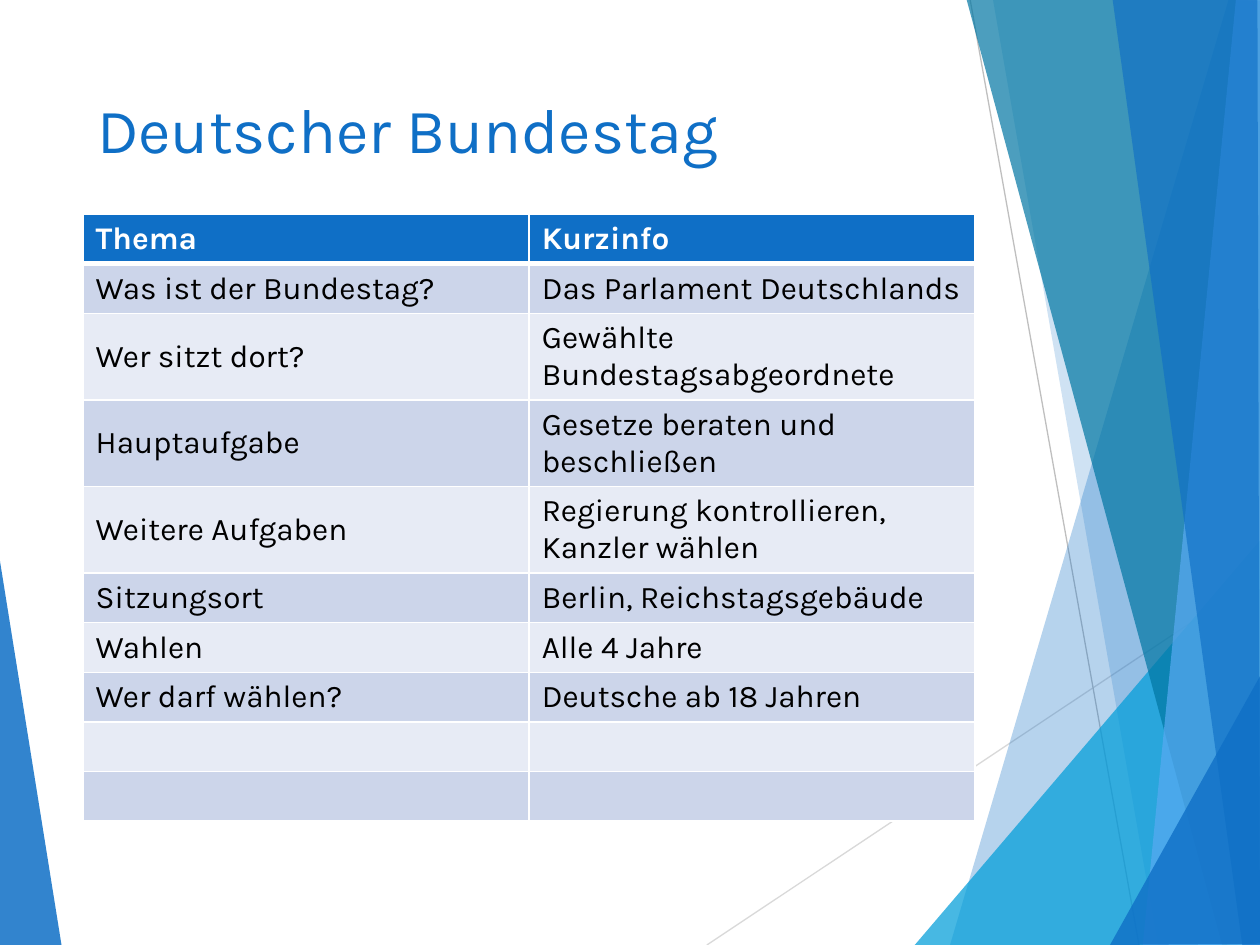
from dataclasses import dataclass

from lxml import etree
from pptx import Presentation
from pptx import util as u
from pptx.dml.color import RGBColor
from pptx.enum import shapes, text
from pptx.oxml.ns import qn


@dataclass(frozen=True)
class Theme:
    font: str = "Karla"
    title_size: int = 36
    table_size: int = 18
    blue: str = "0F6FC6"
    cyan: str = "009DD9"
    teal: str = "0076A3"
    sky: str = "59AAF2"
    white: str = "FFFFFF"
    black: str = "000000"
    bands: tuple = ("CCD5EA", "E7EBF5")
    pale_ray: str = "D9D9D9"
    grey_ray: str = "BFBFBF"


TOPICS = [
    ("Thema", "Kurzinfo"),
    ("Was ist der Bundestag?", "Das Parlament Deutschlands"),
    ("Wer sitzt dort?", "Gewählte Bundestagsabgeordnete"),
    ("Hauptaufgabe", "Gesetze beraten und beschließen"),
    ("Weitere Aufgaben", "Regierung kontrollieren, Kanzler wählen"),
    ("Sitzungsort", "Berlin, Reichstagsgebäude"),
    ("Wahlen", "Alle 4 Jahre"),
    ("Wer darf wählen?", "Deutsche ab 18 Jahren"),
    ("", ""),
    ("", ""),
]


class SlideBuilder:
    def __init__(self, slide, theme):
        self.slide = slide
        self.theme = theme

    def style(self, paragraph, size, color, bold=False):
        font = paragraph.font
        font.name = self.theme.font
        font.size = u.Pt(size)
        font.bold = bold
        font.color.rgb = RGBColor.from_string(color)

    def title(self, wording, left, top, width, height):
        title = self.slide.shapes.title
        title.left, title.top = u.Inches(left), u.Inches(top)
        title.width, title.height = u.Inches(width), u.Inches(height)
        frame = title.text_frame
        frame.text = wording
        frame.auto_size = text.MSO_AUTO_SIZE.NONE
        frame.vertical_anchor = text.MSO_ANCHOR.TOP
        heading = frame.paragraphs[0]
        heading.alignment = text.PP_ALIGN.LEFT
        self.style(heading, self.theme.title_size, self.theme.blue)

    def facet(self, color, opacity, *corners):
        """Draw a borderless polygon; opacity is a percentage."""
        start, *rest = [(u.Inches(x), u.Inches(y)) for x, y in corners]
        outline = self.slide.shapes.build_freeform(*start)
        outline.add_line_segments(rest, close=True)
        facet = outline.convert_to_shape()
        facet.shadow.inherit = False
        facet.line.fill.background()
        facet.fill.solid()
        facet.fill.fore_color.rgb = RGBColor.from_string(color)
        tint = facet.fill._xPr.find(".//" + qn("a:srgbClr"))
        etree.SubElement(tint, qn("a:alpha"), val=str(opacity * 1000))

    def ray(self, color, start, end):
        ray = self.slide.shapes.add_connector(
            shapes.MSO_CONNECTOR.STRAIGHT, *map(u.Inches, start + end))
        ray.line.color.rgb = RGBColor.from_string(color)
        ray.line.width = u.Pt(0.75)
        etree.SubElement(ray._element.spPr, qn("a:effectLst"))

    def border(self, cell, side, points):
        edge = etree.Element(qn(f"a:ln{side}"), w=str(u.Pt(points)))
        fill = etree.SubElement(edge, qn("a:solidFill"))
        etree.SubElement(fill, qn("a:srgbClr"), val=self.theme.white)
        return edge

    def cell(self, cell, wording, fill, color, header, below_header):
        cell.text = wording
        cell.vertical_anchor = text.MSO_ANCHOR.MIDDLE
        cell.fill.solid()
        cell.fill.fore_color.rgb = RGBColor.from_string(fill)
        self.style(cell.text_frame.paragraphs[0], self.theme.table_size, color, header)
        widths = {"L": 1, "R": 1, "T": 3 if below_header else 1, "B": 3 if header else 1}
        properties = cell._tc.get_or_add_tcPr()
        for position, (side, points) in enumerate(widths.items()):
            properties.insert(position, self.border(cell, side, points))

    def table(self, rows, left, top, column_width, row_height):
        columns = len(rows[0])
        table = self.slide.shapes.add_table(
            len(rows), columns, u.Inches(left), u.Inches(top),
            u.Inches(column_width * columns), u.Inches(row_height * len(rows))).table
        for r, row in enumerate(rows):
            header = r == 0
            fill = self.theme.blue if header else self.theme.bands[(r - 1) % 2]
            color = self.theme.white if header else self.theme.black
            for c, wording in enumerate(row):
                self.cell(table.cell(r, c), wording, fill, color, header, r == 1)


def draw_backdrop(page):
    theme = page.theme
    page.facet(theme.blue, 85, (-0.01, 4.39), (0.49, 7.51), (-0.01, 7.5))
    page.ray(theme.pale_ray, (5.61, 7.5), (10.01, 4.57))
    page.ray(theme.grey_ray, (7.7, 0), (9.04, 7.5))
    page.facet(theme.blue, 30, (9.75, 0), (7.54, 7.5), (10.02, 7.51), (10.01, 0.01))
    page.facet(theme.blue, 20, (7.88, -0.01), (9.19, 7.5), (10.01, 7.5), (10.01, -0.01))
    page.facet(theme.cyan, 72, (7.26, 7.5), (10, 4.29), (10.01, 7.5))
    page.facet(theme.teal, 70, (7.67, -0.01), (9.7, 7.5), (10.01, 7.49), (10.01, -0.01))
    page.facet(theme.sky, 70, (9.81, -0.01), (9.07, 7.5), (10.01, 7.5), (10, -0.01))
    page.facet(theme.blue, 65, (8.83, -0.01), (9.86, 7.5), (10, 7.5), (9.98, -0.01))
    page.facet(theme.blue, 80, (8.81, 7.5), (10.01, 5.35), (10.01, 7.49))


def main():
    deck = Presentation()
    deck.slide_width, deck.slide_height = u.Inches(10), u.Inches(7.5)
    title_only = deck.slide_layouts[5]
    page = SlideBuilder(deck.slides.add_slide(title_only), Theme())
    draw_backdrop(page)
    page.title("Deutscher Bundestag", 0.67, 0.67, 6.94, 1.44)
    page.table(TOPICS, left=0.66, top=1.7, column_width=3.54, row_height=0.38)
    deck.save("out.pptx")


if __name__ == "__main__":
    main()
